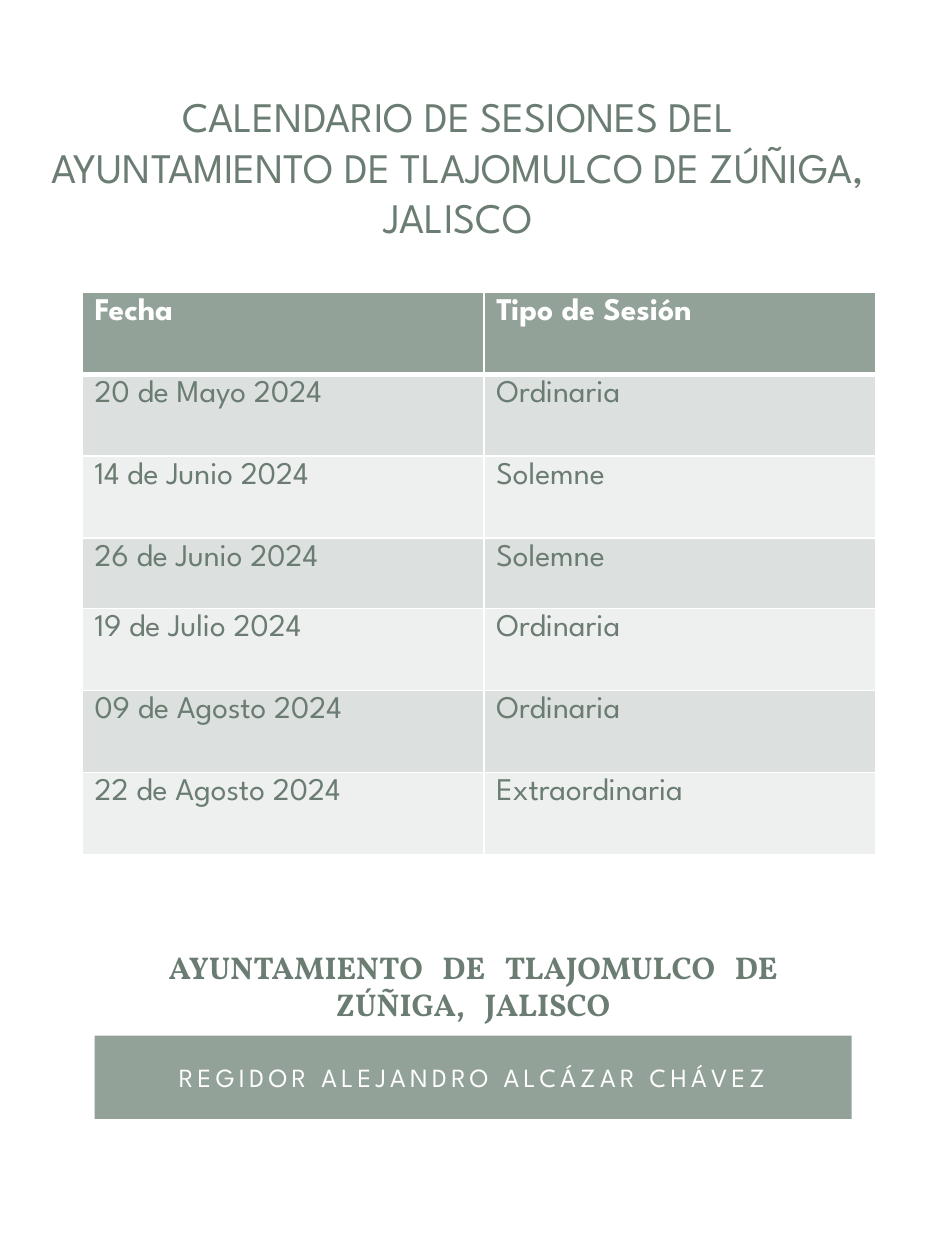
from lxml.etree import SubElement
from pptx import Presentation
from pptx.dml.color import RGBColor
from pptx.enum.shapes import MSO_SHAPE as Shape
from pptx.enum.text import MSO_ANCHOR as Anchor, MSO_AUTO_SIZE as AutoSize, PP_ALIGN as Align
from pptx.oxml.ns import qn
from pptx.util import Inches, Pt

WHITE = RGBColor(0xFF, 0xFF, 0xFF)
SAGE = RGBColor(0x93, 0xA2, 0x99)
DARK_SAGE = RGBColor(0x6B, 0x7D, 0x72)
ROW_DARK = RGBColor(0xDC, 0xE0, 0xDE)
ROW_LIGHT = RGBColor(0xEE, 0xF0, 0xEF)
SANS = "League Spartan"
SERIF = "Vollkorn"

SESSIONS = [
    ("Fecha", "Tipo de Sesión"),
    ("20 de Mayo 2024", "Ordinaria"),
    ("14 de Junio 2024", "Solemne"),
    ("26 de Junio 2024", "Solemne"),
    ("19 de Julio 2024", "Ordinaria"),
    ("09 de Agosto 2024", "Ordinaria"),
    ("22 de Agosto 2024", "Extraordinaria"),
]
COLUMN_WIDTHS = [3.19, 3.11]
ROW_HEIGHTS = [0.65, 0.65, 0.65, 0.56, 0.65, 0.65, 0.65]


def set_font(para, name, size, color, bold=False):
    para.font.name = name
    para.font.size = Pt(size)
    para.font.color.rgb = color
    para.font.bold = bold


def place(box, left, top, width, height):
    box.left, box.top = Inches(left), Inches(top)
    box.width, box.height = Inches(width), Inches(height)
    box.text_frame.word_wrap = True
    box.text_frame.auto_size = AutoSize.NONE
    box.text_frame.vertical_anchor = Anchor.MIDDLE


deck = Presentation()
deck.slide_width, deck.slide_height = Inches(7.5), Inches(10)
page = deck.slides.add_slide(deck.slide_layouts[1])
title, body = page.placeholders

bar = page.shapes.add_shape(
    Shape.RECTANGLE, Inches(0.75), Inches(8.22), Inches(6.01), Inches(0.66)
)
bar.shadow.inherit = False
bar.fill.solid()
bar.fill.fore_color.rgb = SAGE
bar.line.fill.background()
title._element.addprevious(bar._element)

place(title, 0.75, 7.44, 6.01, 0.76)
para = title.text_frame.paragraphs[0]
para.alignment = Align.CENTER
set_font(para, SERIF, 18, DARK_SAGE, bold=True)
for part in ["AYUNTAMIENTO", " ", "DE", " ", "TLAJOMULCO", " ", "DE ZÚÑIGA,", " ", "JALISCO"]:
    span = para.add_run()
    span.text = part
    if part == " ":
        span.font._element.set("spc", "760")

place(body, 0.78, 8.25, 5.94, 0.59)
para = body.text_frame.paragraphs[0]
para.alignment = Align.CENTER
set_font(para, SANS, 15, WHITE)
span = para.add_run()
span.text = "REGIDOR ALEJANDRO ALCÁZAR CHÁVEZ"
span.font._element.set("spc", "250")
properties = para._p.get_or_add_pPr()
properties.set("marL", "0")
properties.set("indent", "0")
properties.insert_element_before(
    properties.makeelement(qn("a:buNone")), "a:tabLst", "a:defRPr", "a:extLst"
)

heading = page.shapes.add_textbox(0, 0, 0, 0)
place(heading, 0.29, 0.67, 6.69, 1.31)
heading.text_frame.vertical_anchor = Anchor.TOP
para = heading.text_frame.paragraphs[0]
para.text = "CALENDARIO DE SESIONES DEL AYUNTAMIENTO DE TLAJOMULCO DE ZÚÑIGA, JALISCO"
para.alignment = Align.CENTER
set_font(para, SANS, 24, DARK_SAGE)

table = page.shapes.add_table(
    len(SESSIONS), len(COLUMN_WIDTHS),
    Inches(0.65), Inches(2.32), Inches(6.3), Inches(sum(ROW_HEIGHTS)),
).table
for column, width in zip(table.columns, COLUMN_WIDTHS):
    column.width = Inches(width)
for row, height in zip(table.rows, ROW_HEIGHTS):
    row.height = Inches(height)

for row_index, session in enumerate(SESSIONS):
    is_header = row_index == 0
    band = ROW_DARK if row_index % 2 else ROW_LIGHT
    for column_index, text in enumerate(session):
        cell = table.cell(row_index, column_index)
        para = cell.text_frame.paragraphs[0]
        para.text = text
        set_font(para, SANS, 18, WHITE if is_header else DARK_SAGE, is_header)
        cell_properties = cell._tc.get_or_add_tcPr()
        for side in ["lnL", "lnR", "lnT", "lnB"]:
            thick = (side, row_index) in [("lnB", 0), ("lnT", 1)]
            border = SubElement(cell_properties, qn(f"a:{side}"), w=str(Pt(3 if thick else 1)))
            fill = SubElement(border, qn("a:solidFill"))
            SubElement(fill, qn("a:srgbClr"), val=str(WHITE))
        cell.fill.solid()
        cell.fill.fore_color.rgb = SAGE if is_header else band

deck.save("out.pptx")
